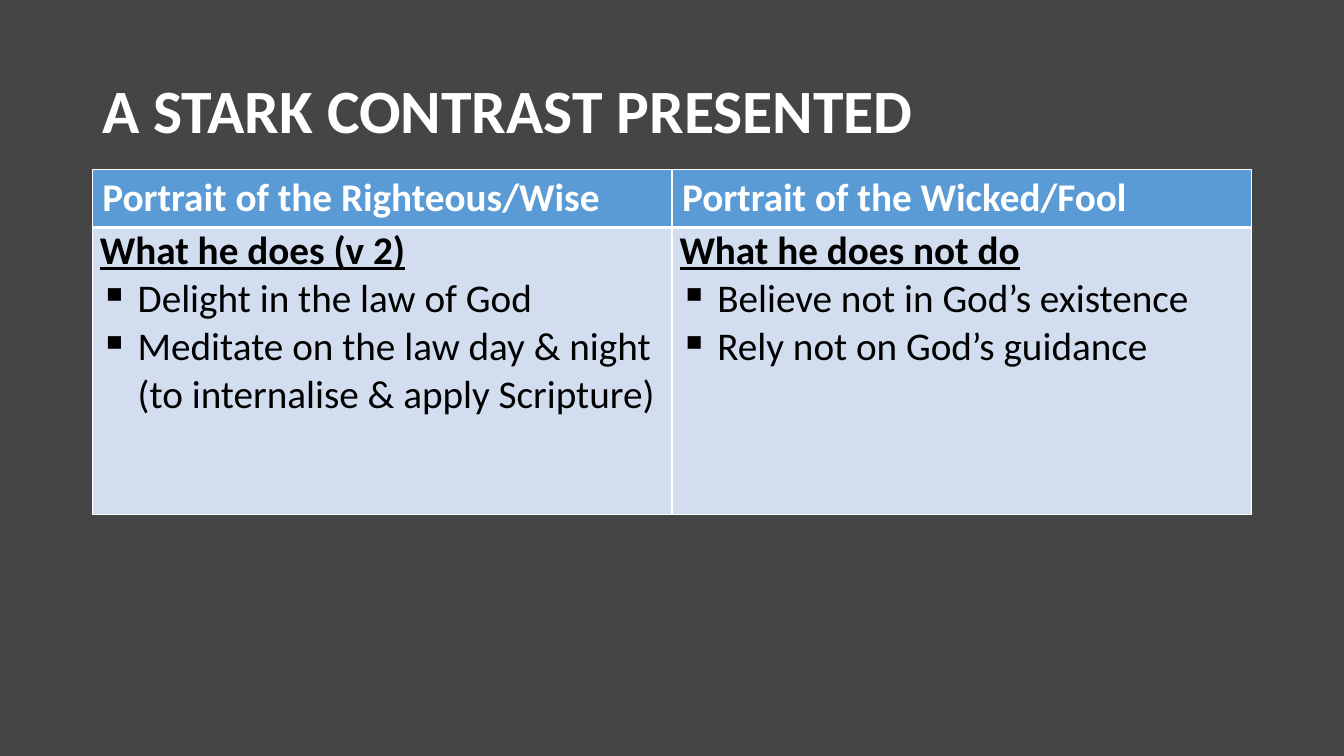
"""Build a slide contrasting the righteous and the wicked in a two-column table."""
from lxml import etree
from pptx import Presentation
from pptx.dml.color import RGBColor
from pptx.enum import text
from pptx.oxml import ns
from pptx.util import Pt

TITLE = "A STARK CONTRAST PRESENTED"
COLUMNS = [
    ("Portrait of the Righteous/Wise", "What he does (v 2)",
     ["Delight in the law of God",
      "Meditate on the law day & night (to internalise & apply Scripture)"]),
    ("Portrait of the Wicked/Fool", "What he does not do",
     ["Believe not in God’s existence", "Rely not on God’s guidance"]),
]
COLORS = {"back": "454545", "white": "FFFFFF", "black": "000000",
          "head": "5B9BD5", "body": "D2DEEF"}
FONT = "Calibri"
SLIDE_W, SLIDE_H = 960, 540
LEFT, WIDTH = 66, 828
TITLE_TOP, TITLE_H = 28.8, 104.4
TABLE_TOP, HEAD_H, BODY_H = 121, 41.4, 205
INDENT = 27


def rgb(name):
    return RGBColor.from_string(COLORS[name])


def write(p, words, size=28, color="black", bold=False, underline=False, bullet=False):
    r = p.add_run()
    r.text = words
    r.font.name, r.font.size = FONT, Pt(size)
    r.font.bold, r.font.underline = bold, underline
    r.font.color.rgb = rgb(color)
    if bullet:
        pr = p._p.get_or_add_pPr()
        pr.set("marL", str(Pt(INDENT)))
        pr.set("indent", str(-Pt(INDENT)))
        etree.SubElement(pr, ns.qn("a:buChar")).set("char", "▪")


def style_cell(cell, fill, bottom):
    pr = cell._tc.get_or_add_tcPr()
    for side, width in (("L", 1), ("R", 1), ("T", 1), ("B", bottom)):
        ln = etree.SubElement(pr, ns.qn(f"a:ln{side}"), w=str(Pt(width)))
        paint = etree.SubElement(ln, ns.qn("a:solidFill"))
        etree.SubElement(paint, ns.qn("a:srgbClr"), val=COLORS["white"])
    cell.fill.solid()
    cell.fill.fore_color.rgb = rgb(fill)


def add_title(s):
    sp = s.shapes.add_textbox(Pt(LEFT), Pt(TITLE_TOP), Pt(WIDTH), Pt(TITLE_H))
    tf = sp.text_frame
    tf.word_wrap = True
    tf.vertical_anchor = text.MSO_ANCHOR.MIDDLE
    p = tf.paragraphs[0]
    p.line_spacing = 0.9
    write(p, TITLE, size=44, color="white", bold=True)


def add_contrast_table(s):
    table = s.shapes.add_table(2, len(COLUMNS), Pt(LEFT), Pt(TABLE_TOP),
                               Pt(WIDTH), Pt(HEAD_H + BODY_H)).table
    table.rows[0].height, table.rows[1].height = Pt(HEAD_H), Pt(BODY_H)
    for i, (heading, lead, points) in enumerate(COLUMNS):
        table.columns[i].width = Pt(WIDTH / len(COLUMNS))
        head, body = table.cell(0, i), table.cell(1, i)
        style_cell(head, "head", 3)
        write(head.text_frame.paragraphs[0], heading, color="white", bold=True)
        style_cell(body, "body", 1)
        body.margin_left = body.margin_right = Pt(5.4)
        body.margin_top = body.margin_bottom = Pt(0)
        tf = body.text_frame
        write(tf.paragraphs[0], lead, bold=True, underline=True)
        for point in points:
            write(tf.add_paragraph(), point, bullet=True)


def main():
    prs = Presentation()
    prs.slide_width, prs.slide_height = Pt(SLIDE_W), Pt(SLIDE_H)
    s = prs.slides.add_slide(prs.slide_layouts[6])
    s.background.fill.solid()
    s.background.fill.fore_color.rgb = rgb("back")
    add_title(s)
    add_contrast_table(s)
    prs.save("out.pptx")


if __name__ == "__main__":
    main()
